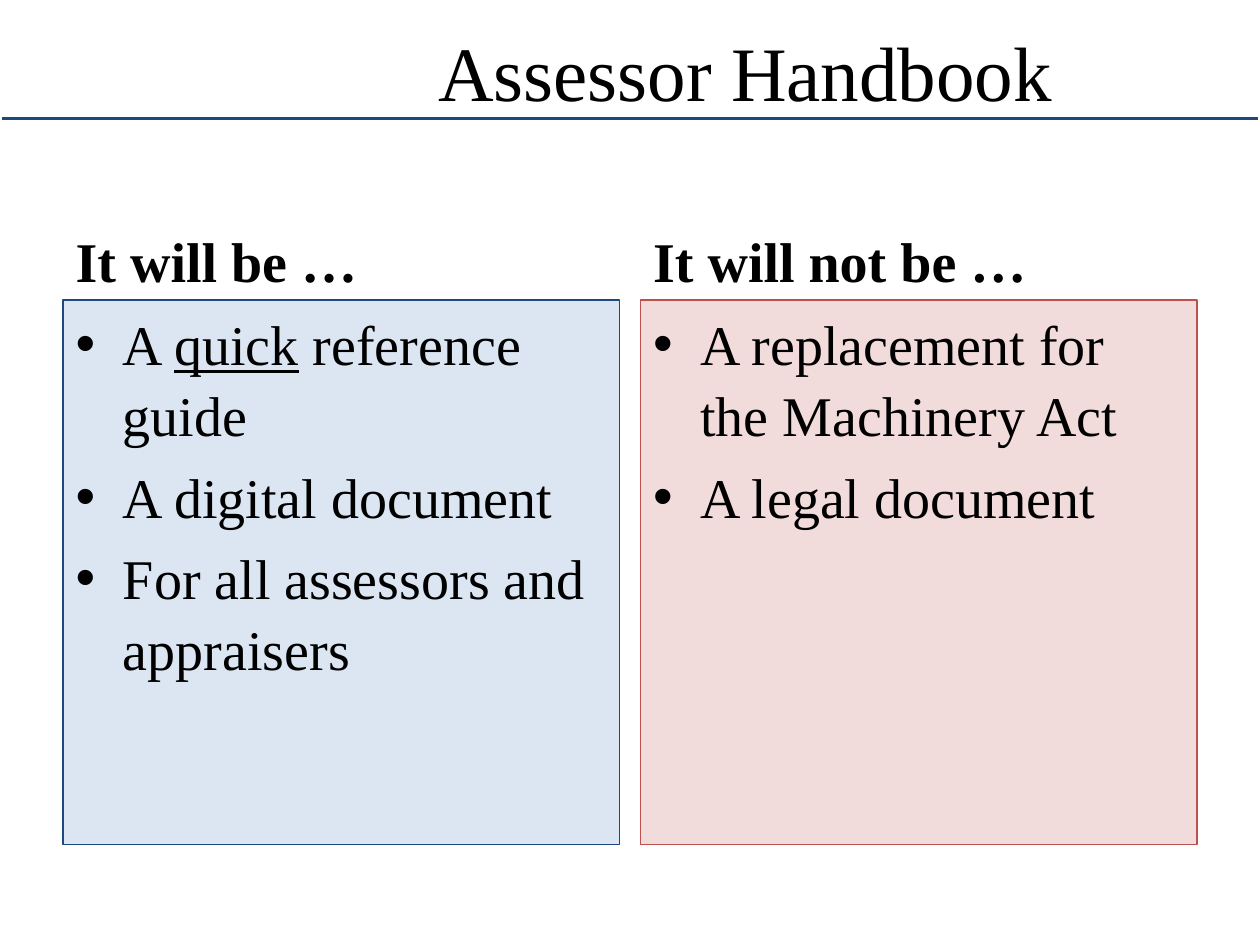
from dataclasses import dataclass

from lxml import etree
from pptx import Presentation
from pptx.dml.color import RGBColor
from pptx.enum.shapes import MSO_SHAPE
from pptx.enum.text import MSO_ANCHOR, MSO_AUTO_SIZE, PP_ALIGN
from pptx.oxml.ns import qn
from pptx.util import Pt

RECT = MSO_SHAPE.RECTANGLE
TOP, MIDDLE, BOTTOM = MSO_ANCHOR.TOP, MSO_ANCHOR.MIDDLE, MSO_ANCHOR.BOTTOM
NO_FIT = MSO_AUTO_SIZE.NONE
CENTER = PP_ALIGN.CENTER
COMPARISON = 4  # template layout: title and two headed lists


@dataclass(frozen=True)
class Theme:
    font: str = "Times New Roman"
    title_size: int = 44
    body_size: int = 32
    text: str = "000000"
    white: str = "FFFFFF"
    blue: str = "1F497D"
    pale_blue: str = "DCE6F2"
    red: str = "C0504D"
    pale_red: str = "F2DCDB"


THEME = Theme()

# Column grid, in points
MARGIN, COLUMN_W, COLUMN_GAP = 36, 318, 12
HEADING_TOP, HEADING_H = 121, 50.5
LIST_TOP, LIST_H = HEADING_TOP + HEADING_H, 311
INDENT = 27

# Heading, items (each a list of text and underline pairs), fill, outline
COLUMNS = [
    ("It will be …",
     [[("A ", False), ("quick", True), (" reference guide", False)],
      [("A digital document", False)],
      [("For all assessors and appraisers", False)]],
     THEME.pale_blue, THEME.blue),
    ("It will not be …",
     [[("A replacement for the Machinery Act", False)],
      [("A legal document", False)]],
     THEME.pale_red, THEME.red),
]


def paint(sp, fill, line, width):
    sp.fill.solid()
    sp.fill.fore_color.rgb = RGBColor.from_string(fill)
    sp.line.color.rgb = RGBColor.from_string(line)
    sp.line.width = Pt(width)


def place(sp, left, top, width, height, anchor):
    sp.left, sp.top, sp.width, sp.height = map(Pt, (left, top, width, height))
    tf = sp.text_frame
    tf.word_wrap = True
    tf.auto_size = NO_FIT
    tf.vertical_anchor = anchor
    return tf


def style_run(r, size, bold=False, underline=False):
    font = r.font
    font.name = THEME.font
    font.size = Pt(size)
    font.bold = bold
    font.underline = underline
    font.color.rgb = RGBColor.from_string(THEME.text)


def add_bullet(p):
    pPr = p._p.get_or_add_pPr()
    pPr.set("marL", str(Pt(INDENT)))
    pPr.set("indent", str(-Pt(INDENT)))
    etree.SubElement(pPr, qn("a:buFont")).set("typeface", "Arial")
    etree.SubElement(pPr, qn("a:buChar")).set("char", "•")


def add_divider(slide):
    sp = slide.shapes.add_shape(RECT, Pt(0), Pt(66), Pt(720), Pt(3.6))
    sp.shadow.inherit = False
    paint(sp, THEME.white, THEME.white, 2)
    sp.fill.fore_color.rgb = RGBColor.from_string(THEME.blue)


def set_title(sp, text):
    tf = place(sp, 168, 18, 516, 45, MIDDLE)
    tf.text = text
    p = tf.paragraphs[0]
    p.alignment = CENTER
    style_run(p.runs[0], THEME.title_size)


def set_heading(sp, left, text):
    tf = place(sp, left, HEADING_TOP, COLUMN_W, HEADING_H, BOTTOM)
    tf.text = text
    p = tf.paragraphs[0]
    p.space_before = Pt(0)
    style_run(p.runs[0], THEME.body_size, bold=True)


def set_list(sp, left, items, fill, line):
    tf = place(sp, left, LIST_TOP, COLUMN_W, LIST_H, TOP)
    paint(sp, fill, line, 0.75)
    for i, parts in enumerate(items):
        p = tf.add_paragraph() if i else tf.paragraphs[0]
        add_bullet(p)
        p.space_before = Pt(6.4 if i else 0)
        p.line_spacing = 1.05
        for text, underline in parts:
            r = p.add_run()
            r.text = text
            style_run(r, THEME.body_size, underline=underline)


def main():
    prs = Presentation()
    prs.slide_width, prs.slide_height = Pt(720), Pt(540)
    slide = prs.slides.add_slide(prs.slide_layouts[COMPARISON])

    # Title band
    add_divider(slide)
    set_title(slide.shapes.title, "Assessor Handbook")

    # Two headed lists
    for i, (heading, items, fill, line) in enumerate(COLUMNS):
        left = MARGIN + i * (COLUMN_W + COLUMN_GAP)
        set_heading(slide.placeholders[1 + 2 * i], left, heading)
        set_list(slide.placeholders[2 + 2 * i], left, items, fill, line)

    prs.save("out.pptx")


if __name__ == "__main__":
    main()
